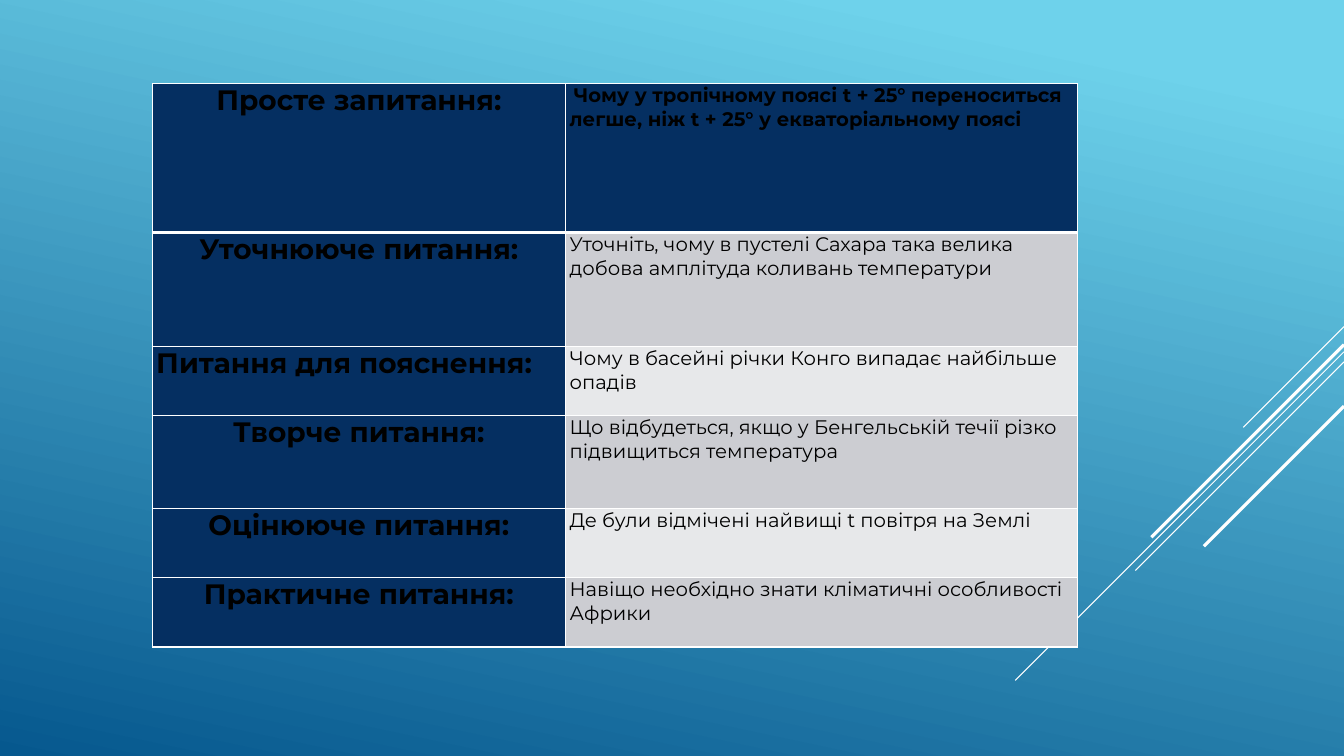
import collections

import lxml.etree
import pptx
import pptx.dml.color
import pptx.enum.shapes
import pptx.enum.text
import pptx.oxml.ns
import pptx.util

Box = collections.namedtuple("Box", "left top width height")
SLIDE = Box(0, 0, 13.33, 7.5)
THEME = {
    "sky": [(0.1, "6ED2EB"), (1, "06588E")],
    "sky_angle": 360 - 102,
    "white": "FFFFFF",
    "text": "000000",
    "navy": "052F61",
    "bands": ["E7E8EA", "CCCDD2"],
    "font": "Montserrat",
    "kind_size": 20,
    "question_size": 14,
    "rule": 1,
    "header_rule": 3,
}
STRIPES = [(0, 1, 0.75), (0.25, 3.26, 0.75), (0.35, 2.07, 0.75), (0.18, 1.91, 2.25), (0.79, 1.39, 2.25)]
QUESTIONS = [
    ("Просте запитання:", "Чому у тропічному поясі t + 25° переноситься легше, ніж t + 25° у екваторіальному поясі", 1.48),
    ("Уточнююче питання:", "Уточніть, чому в пустелі Сахара така велика добова амплітуда коливань температури", 1.13),
    ("Питання для пояснення:", "Чому в басейні річки Конго випадає найбільше опадів", 0.69),
    ("Творче питання:", "Що відбудеться, якщо у Бенгельській течії різко підвищиться температура", 0.92),
    ("Оцінююче питання:", "Де були відмічені найвищі t повітря на Землі", 0.69),
    ("Практичне питання:", "Навіщо необхідно знати кліматичні особливості Африки", 0.69),
]
KIND_SHARE = 4.1 / 9.18
LEFT_ALIGNED_ROW = 2


def rgb(code):
    """Return the colour for a hex code."""
    return pptx.dml.color.RGBColor.from_string(code)


def apply(target, values):
    """Set each named attribute of the target."""
    for name, value in values.items():
        setattr(target, name, value)


def paint_sky(slide):
    """Fill the background with the blue gradient."""
    fill = slide.background.fill
    fill.gradient()
    fill.gradient_angle = THEME["sky_angle"]
    for stop, (position, colour) in zip(fill.gradient_stops, THEME["sky"]):
        stop.position = position
        stop.color.rgb = rgb(colour)


def draw_stripes(slide, box):
    """Draw the diagonal stripes falling from the right edge of the box."""
    right = box.left + box.width
    for drop, reach, weight in STRIPES:
        top = box.top + drop
        ends = [pptx.util.Inches(n) for n in (right, top, right - reach, top + reach)]
        stripe = slide.shapes.add_connector(pptx.enum.shapes.MSO_CONNECTOR.STRAIGHT, *ends)
        stripe.line.color.rgb = rgb(THEME["white"])
        stripe.line.width = pptx.util.Pt(weight)
        lxml.etree.SubElement(stripe.element.spPr, pptx.oxml.ns.qn("a:effectLst"))


def rule_cell(cell, row):
    """Put white rules round a cell, heavier between the first two rows."""
    weights = {"lnL": THEME["rule"], "lnR": THEME["rule"],
               "lnT": THEME["header_rule" if row == 1 else "rule"],
               "lnB": THEME["header_rule" if row == 0 else "rule"]}
    properties = cell._tc.get_or_add_tcPr()
    for side, weight in weights.items():
        rule = lxml.etree.SubElement(properties, pptx.oxml.ns.qn("a:" + side), w=str(pptx.util.Pt(weight)))
        fill = lxml.etree.SubElement(rule, pptx.oxml.ns.qn("a:solidFill"))
        lxml.etree.SubElement(fill, pptx.oxml.ns.qn("a:srgbClr"), val=THEME["white"])


def write_cell(cell, row, wording, fill, size, bold, align):
    """Fill one cell with its wording, colour and rules."""
    inset = pptx.util.Inches(0.04)
    apply(cell, {"margin_left": inset, "margin_right": inset, "margin_top": 0, "margin_bottom": 0})
    rule_cell(cell, row)
    cell.fill.solid()
    cell.fill.fore_color.rgb = rgb(fill)
    paragraph = cell.text_frame.paragraphs[0]
    paragraph.alignment = align
    run = paragraph.add_run()
    run.text = wording
    apply(run.font, {"name": THEME["font"], "size": pptx.util.Pt(size), "bold": bold})
    run.font.color.rgb = rgb(THEME["text"])
    return paragraph


def build_questions(slide, box):
    """Build the table of question kinds and examples inside the box."""
    frame = slide.shapes.add_table(len(QUESTIONS), 2, *[pptx.util.Inches(n) for n in box])
    table = frame.table
    apply(table, {"first_row": False, "horz_banding": False})
    for column, share in zip(table.columns, (KIND_SHARE, 1 - KIND_SHARE)):
        column.width = pptx.util.Inches(box.width * share)
    total = sum(weight for _, _, weight in QUESTIONS)
    align = pptx.enum.text.PP_ALIGN
    for row, (kind, question, weight) in enumerate(QUESTIONS):
        table.rows[row].height = pptx.util.Inches(box.height * weight / total)
        header = row == 0
        write_cell(table.cell(row, 0), row, kind, THEME["navy"], THEME["kind_size"], True,
                   align.LEFT if row == LEFT_ALIGNED_ROW else align.CENTER)
        fill = THEME["navy"] if header else THEME["bands"][row % 2]
        example = write_cell(table.cell(row, 1), row, question, fill, THEME["question_size"], header, align.LEFT)
        if header:
            example._p.get_or_add_pPr().set("indent", str(pptx.util.Inches(0.04)))


def main():
    """Create the slide and save it."""
    deck = pptx.Presentation()
    apply(deck, {"slide_width": pptx.util.Inches(SLIDE.width), "slide_height": pptx.util.Inches(SLIDE.height)})
    slide = deck.slides.add_slide(deck.slide_layouts[6])
    paint_sky(slide)
    draw_stripes(slide, Box(10.07, 3.24, SLIDE.width - 10.07, 3.51))
    build_questions(slide, Box(1.51, 0.83, 9.18, 5.59))
    deck.save("out.pptx")


if __name__ == "__main__":
    main()
